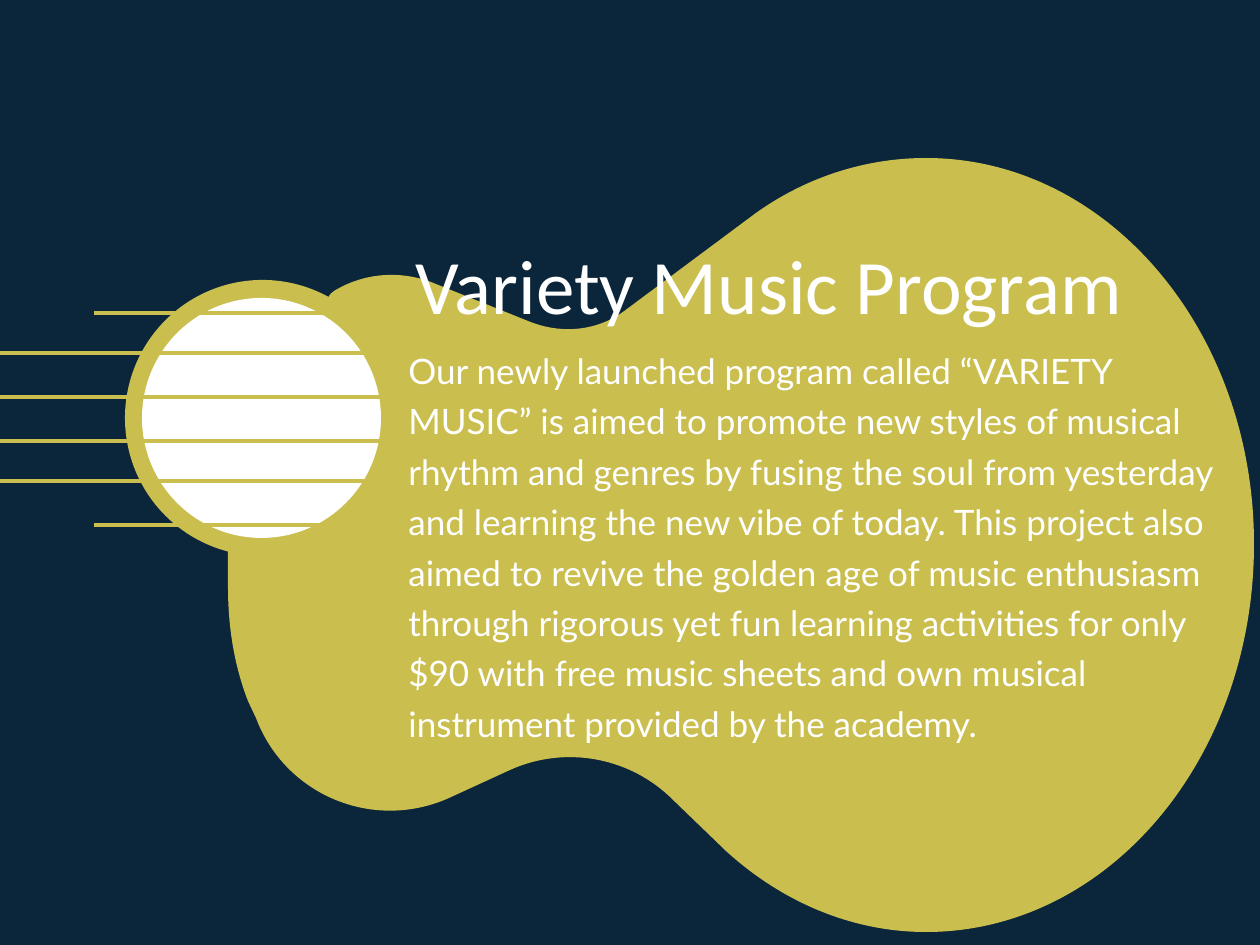
from lxml import etree
from pptx import Presentation
from pptx import util as u
from pptx.dml.color import RGBColor
from pptx.enum import shapes, text
from pptx.oxml import ns

PX = 914400 / 126
HEX = {"navy": "0B263B", "gold": "CABE4E", "white": "FFFFFF"}


def px(n):
    return u.Emu(round(n * PX))


def paint(shape, hue):
    shape.shadow.inherit = False
    shape.fill.solid()
    shape.fill.fore_color.rgb = RGBColor.from_string(HEX[hue])
    shape.line.fill.background()


prs = Presentation()
prs.slide_width, prs.slide_height = px(1260), px(945)
slide = prs.slides.add_slide(prs.slide_layouts[6])
back = slide.background.fill
back.solid()
back.fore_color.rgb = RGBColor.from_string(HEX["navy"])

# Guitar body: a pair is a straight edge, six numbers are a Bezier curve
edges = [
    (627, 309), (599, 331, 562, 335, 528, 321),
    (436, 284), (403, 270, 365, 272, 334, 291),
    (324, 297, 323, 314, 333, 321),
    (365, 345), (392, 365, 397, 401, 378, 426),
    (323, 505), (228, 546), (228, 587),
    (228, 626, 234, 665, 248, 701),
    (256, 718), (285, 795, 373, 832, 449, 798),
    (510, 770), (563, 746, 626, 756, 669, 796),
    (726, 851), (782, 902, 852, 932, 926, 932),
    (1108, 932, 1254, 759, 1254, 544),
    (1254, 331, 1108, 158, 926, 158),
    (864, 158, 805, 178, 756, 213),
]
ends = [edge[-2:] for edge in edges]
pen = slide.shapes.build_freeform(*ends[-1], scale=PX)
pen.add_line_segments(ends, close=True)
body = pen.convert_to_shape()
paint(body, "gold")

# Bend the edges that have control points
left = min(x for x, y in ends)
top = min(y for x, y in ends)
for node, edge in zip(list(body._element.iter(ns.qn("a:lnTo"))), edges):
    if len(edge) == 6:
        bend = etree.Element(ns.qn("a:cubicBezTo"))
        for x, y in zip(edge[::2], edge[1::2]):
            etree.SubElement(bend, ns.qn("a:pt"), x=str(x - left), y=str(y - top))
        node.getparent().replace(node, bend)

# Program text and title
words = (
    "Our newly launched program called “VARIETY MUSIC” is aimed to promote "
    "new styles of musical rhythm and genres by fusing the soul from yesterday "
    "and learning the new vibe of today. This project also aimed to revive the "
    "golden age of music enthusiasm through rigorous yet fun learning "
    "activities for only $90 with free music sheets and own musical instrument "
    "provided by the academy."
)
for copy, box, size, font, gap in [
    (words, (396, 335, 844, 432), 20, "Lato", 1.2),
    ("Variety Music Program", (403, 231, 789, 106), 44, "Calibri", 1.0),
]:
    frame = slide.shapes.add_textbox(*map(px, box)).text_frame
    frame.word_wrap = True
    frame.vertical_anchor = text.MSO_ANCHOR.TOP
    para = frame.paragraphs[0]
    para.line_spacing = gap
    run = para.add_run()
    run.text = copy
    run.font.size = u.Pt(size)
    run.font.name = font
    run.font.color.rgb = RGBColor.from_string(HEX["white"])

# Sound hole and its rim
group = slide.shapes.add_group_shape()
for box, hue in [((125, 280, 275, 276), "gold"), ((142, 298, 239, 240), "white")]:
    paint(group.shapes.add_shape(shapes.MSO_SHAPE.OVAL, *map(px, box)), hue)

# Strings
for y, head, tail in [
    (397, 391, -96), (353, 373, -3), (313, 339, 94),
    (441, 391, -96), (481, 381, -3), (525, 336, 94),
]:
    wire = group.shapes.add_connector(
        shapes.MSO_CONNECTOR.STRAIGHT, px(head), px(y), px(tail), px(y))
    wire.line.color.rgb = RGBColor.from_string(HEX["gold"])
    wire.line.width = u.Pt(2.1)
    etree.SubElement(wire._element.spPr, ns.qn("a:effectLst"))

prs.save("out.pptx")
